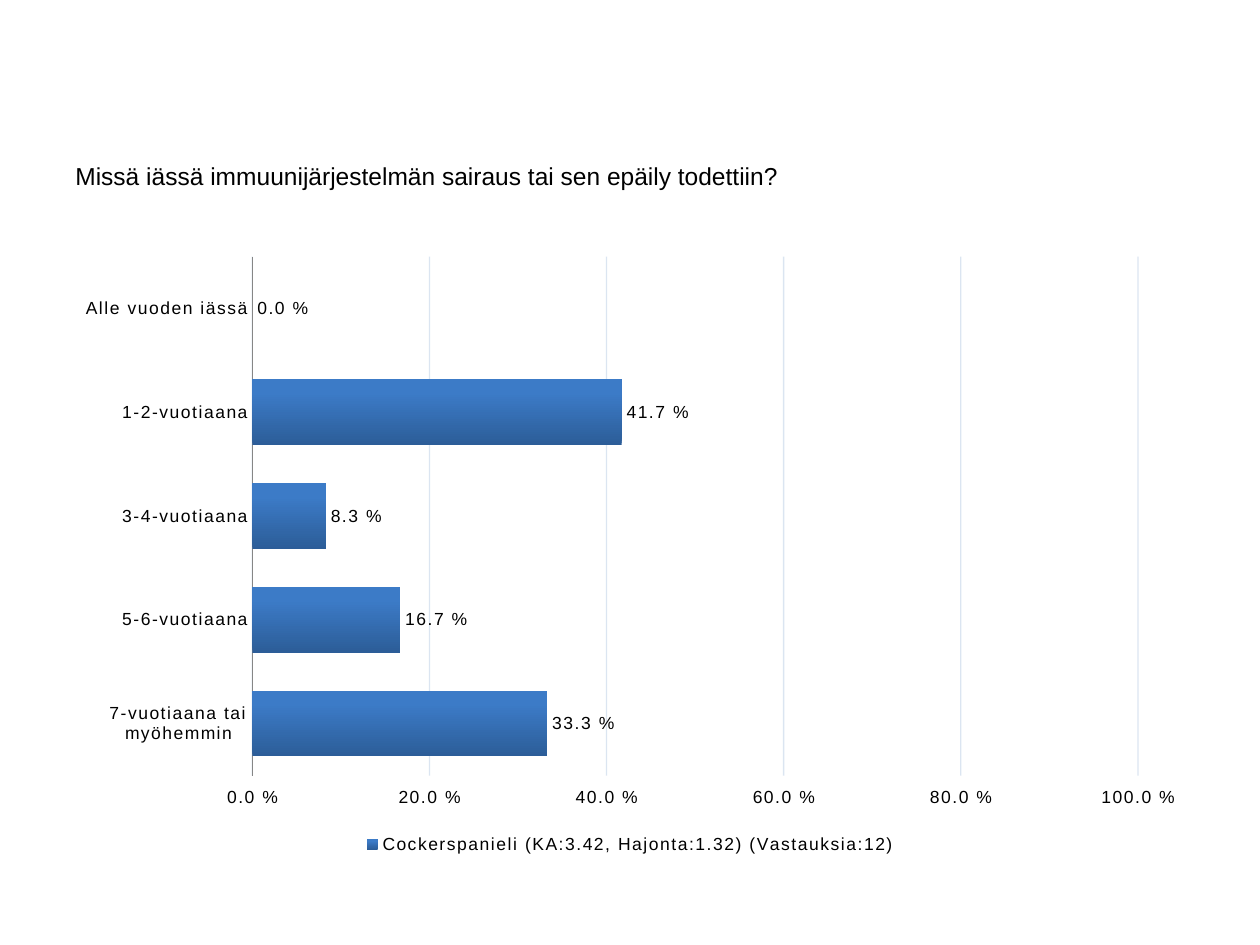
import dataclasses

import lxml.etree
import pptx
import pptx.chart.data
import pptx.dml.color
import pptx.enum.chart
import pptx.oxml.ns
import pptx.util
from pptx.util import Inches

qn = pptx.oxml.ns.qn


def rgb(value):
    return pptx.dml.color.RGBColor.from_string(value)


@dataclasses.dataclass(frozen=True)
class Theme:
    font: str = "Arial"
    text: str = "000000"
    bar_bottom: str = "2C5D98"
    bar_top: str = "3C7BC7"
    grid: str = "4F81BD"
    axis: str = "868686"
    question_size: int = 14
    chart_size: int = 10
    line_width: float = 0.75
    letter_spacing: int = 100  # hundredths of a point


THEME = Theme()
PERCENT = "0.0\\ %"
QUESTION = "Missä iässä immuunijärjestelmän sairaus tai sen epäily todettiin?"
SERIES = "Cockerspanieli (KA:3.42, Hajonta:1.32) (Vastauksia:12)"
SHARES = {
    "Alle vuoden iässä": 0,
    "1-2-vuotiaana": 0.417,
    "3-4-vuotiaana": 0.083,
    "5-6-vuotiaana": 0.167,
    "7-vuotiaana tai myöhemmin": 0.333,
}


def style_font(font, size):
    font.name = THEME.font
    font.size = pptx.util.Pt(size)
    font.color.rgb = rgb(THEME.text)


def style_line(line, color):
    line.color.rgb = rgb(color)
    line.width = pptx.util.Pt(THEME.line_width)


def add_question(slide, box):
    text_frame = slide.shapes.add_textbox(*box).text_frame
    text_frame.word_wrap = True
    text_frame.text = QUESTION
    style_font(text_frame.paragraphs[0].runs[0].font, THEME.question_size)


def style_axes(chart):
    tick_mark = pptx.enum.chart.XL_TICK_MARK.NONE
    for axis in (chart.category_axis, chart.value_axis):
        axis.major_tick_mark = axis.minor_tick_mark = tick_mark
        style_font(axis.tick_labels.font, THEME.chart_size)

    # First category on top
    chart.category_axis.reverse_order = True
    style_line(chart.category_axis.format.line, THEME.axis)

    # High end of the reversed categories: value labels at the bottom
    value_axis = chart.value_axis
    value_axis.tick_label_position = pptx.enum.chart.XL_TICK_LABEL_POSITION.HIGH
    value_axis.minimum_scale, value_axis.maximum_scale = 0, 1
    value_axis.major_unit = 0.2
    value_axis.tick_labels.number_format = PERCENT
    value_axis.tick_labels.number_format_is_linked = False
    value_axis.format.line.fill.background()

    # Pale, partly transparent gridlines
    style_line(value_axis.major_gridlines.format.line, THEME.grid)
    gridlines = chart.element.find(".//" + qn("c:majorGridlines"))
    color = gridlines.find(".//" + qn("a:srgbClr"))
    lxml.etree.SubElement(color, qn("a:alpha")).set("val", "20000")


def style_bars(plot):
    plot.gap_width = 58
    plot.vary_by_categories = False
    series = plot.series[0]
    series.invert_if_negative = False
    fill = series.format.fill
    fill.gradient()
    fill.gradient_angle = 90
    stops = ((0, THEME.bar_bottom), (0.8, THEME.bar_top))
    for stop, (position, color) in zip(fill.gradient_stops, stops):
        stop.position = position
        stop.color.rgb = rgb(color)

    labels = series.data_labels
    labels.show_value = True
    labels.number_format = PERCENT
    labels.number_format_is_linked = False
    labels.position = pptx.enum.chart.XL_LABEL_POSITION.OUTSIDE_END
    style_font(labels.font, THEME.chart_size)


def set_plot_area(chart, **fractions):
    plot_area = chart.element.find(".//" + qn("c:plotArea"))
    layout = plot_area.find(qn("c:layout"))
    if layout is None:
        layout = lxml.etree.Element(qn("c:layout"))
        plot_area.insert(0, layout)
    manual = lxml.etree.SubElement(layout, qn("c:manualLayout"))
    settings = {"layoutTarget": "inner", "xMode": "edge", "yMode": "edge", **fractions}
    for name, value in settings.items():
        lxml.etree.SubElement(manual, qn("c:" + name)).set("val", str(value))


def add_age_chart(slide, box):
    data = pptx.chart.data.CategoryChartData(number_format=PERCENT)
    data.categories = list(SHARES)
    data.add_series(SERIES, list(SHARES.values()))
    chart = slide.shapes.add_chart(
        pptx.enum.chart.XL_CHART_TYPE.BAR_CLUSTERED, *box, data
    ).chart
    chart.has_title = False
    style_font(chart.font, THEME.chart_size)
    style_axes(chart)
    style_bars(chart.plots[0])

    chart.has_legend = True
    chart.legend.position = pptx.enum.chart.XL_LEGEND_POSITION.BOTTOM
    chart.legend.include_in_layout = False
    style_font(chart.legend.font, THEME.chart_size)

    set_plot_area(chart, x=0.167, y=0.02, w=0.781, h=0.844)
    for properties in chart.element.iter(qn("a:defRPr")):
        properties.set("spc", str(THEME.letter_spacing))


def main():
    presentation = pptx.Presentation()
    presentation.slide_width = Inches(10)
    presentation.slide_height = Inches(7.5)
    slide = presentation.slides.add_slide(presentation.slide_layouts[6])
    left, width = Inches(0.5), Inches(9)
    add_question(slide, (left, Inches(1.23), width, Inches(0.59)))
    add_age_chart(slide, (left, Inches(1.94), width, Inches(4.88)))
    presentation.save("out.pptx")


if __name__ == "__main__":
    main()
